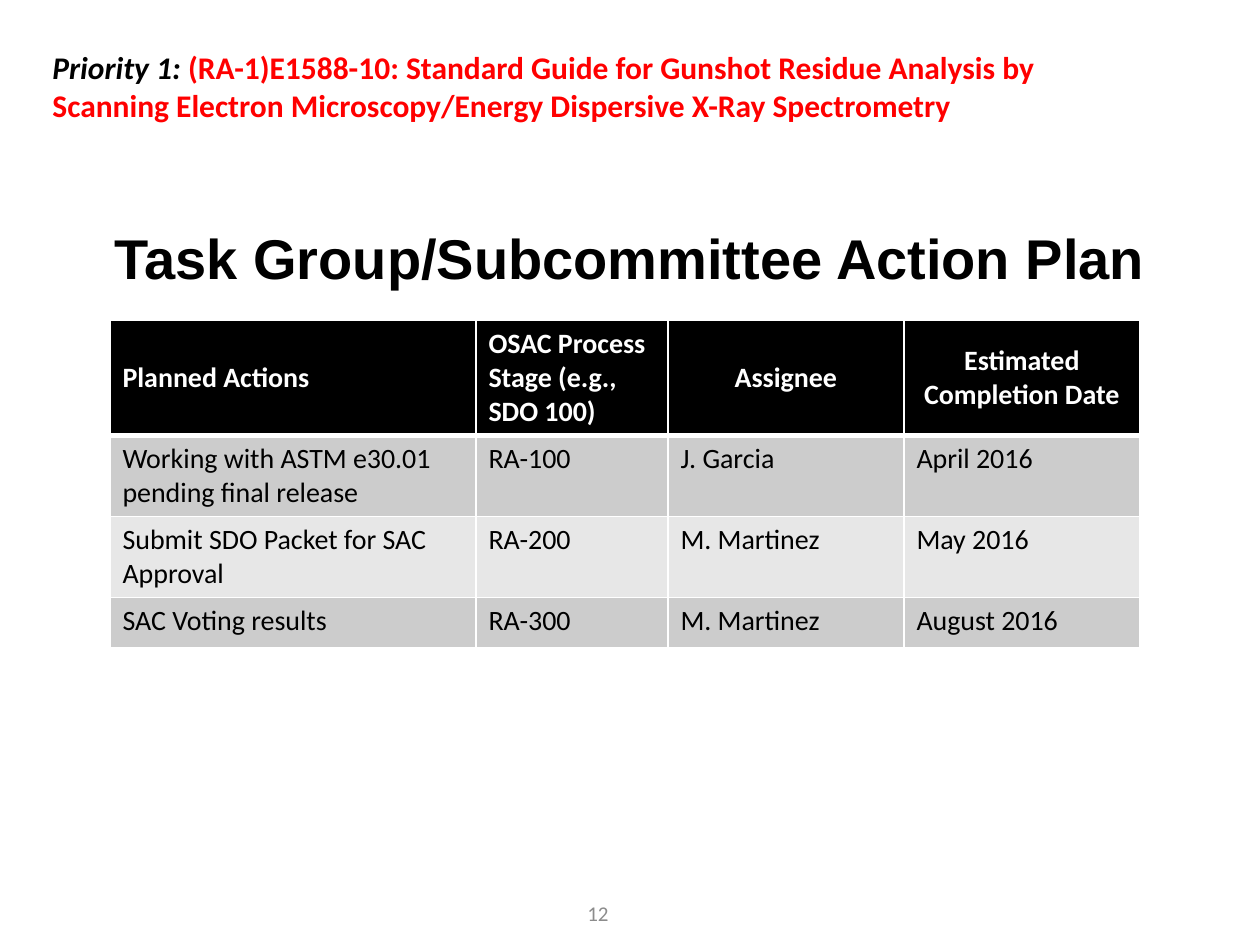
import dataclasses

import lxml.etree
import pptx
import pptx.dml.color
import pptx.enum.text
import pptx.oxml.ns
import pptx.util

RGB = pptx.dml.color.RGBColor
ALIGN = pptx.enum.text.PP_ALIGN
ANCHOR = pptx.enum.text.MSO_ANCHOR

BLACK = RGB(0x00, 0x00, 0x00)
WHITE = RGB(0xFF, 0xFF, 0xFF)
RED = RGB(0xFF, 0x00, 0x00)
GREY = RGB(0x8C, 0x8C, 0x8C)
BANDS = (RGB(0xCC, 0xCC, 0xCC), RGB(0xE7, 0xE7, 0xE7))

DPI = 126


def px(n: int) -> int:
    return round(n * 914400 / DPI)


@dataclasses.dataclass
class Box:
    left: int
    top: int
    width: int
    height: int

    def emu(self) -> tuple[int, ...]:
        return tuple(px(n) for n in dataclasses.astuple(self))


@dataclasses.dataclass
class Column:
    head: str
    width: int
    align: ALIGN
    cells: tuple[str, ...]


COLUMNS = (
    Column("Planned Actions", 366, ALIGN.LEFT,
           ("Working with ASTM e30.01 pending final release",
            "Submit SDO Packet for SAC Approval", "SAC Voting results")),
    Column("OSAC Process Stage (e.g., SDO 100)", 192, ALIGN.LEFT,
           ("RA-100", "RA-200", "RA-300")),
    Column("Assignee", 236, ALIGN.CENTER,
           ("J. Garcia", "M. Martinez", "M. Martinez")),
    Column("Estimated Completion Date", 236, ALIGN.CENTER,
           ("April 2016", "May 2016", "August 2016")),
)
ROWS = (114, 81, 81, 50)


def style(font, size: int, color: RGB, bold: bool = False, name: str = "Calibri") -> None:
    font.name, font.size, font.bold = name, pptx.util.Pt(size), bold
    font.color.rgb = color


def edge(cell, bottom: int) -> None:
    """Give a cell white borders, with the bottom one in points."""
    props = cell._tc.get_or_add_tcPr()
    for i, (side, width) in enumerate(zip("LRTB", (1, 1, 1, bottom))):
        line = lxml.etree.Element(pptx.oxml.ns.qn(f"a:ln{side}"),
                                  w=str(pptx.util.Pt(width)))
        fill = lxml.etree.SubElement(line, pptx.oxml.ns.qn("a:solidFill"))
        lxml.etree.SubElement(fill, pptx.oxml.ns.qn("a:srgbClr"), val=str(WHITE))
        props.insert(i, line)


def paint(cell, text: str, fill: RGB, color: RGB, head: bool, align: ALIGN) -> None:
    cell.text = text
    cell.fill.solid()
    cell.fill.fore_color.rgb = fill
    cell.vertical_anchor = ANCHOR.MIDDLE if head else ANCHOR.TOP
    para = cell.text_frame.paragraphs[0]
    para.alignment = align
    style(para.font, 16, color, head)
    edge(cell, 3 if head else 1)


def add_plan(slide, box: Box) -> None:
    table = slide.shapes.add_table(len(ROWS), len(COLUMNS), *box.emu()).table
    for row, height in zip(table.rows, ROWS):
        row.height = px(height)
    for c, col in enumerate(COLUMNS):
        table.columns[c].width = px(col.width)
        paint(table.cell(0, c), col.head, BLACK, WHITE, True, col.align)
        for r, text in enumerate(col.cells):
            paint(table.cell(r + 1, c), text, BANDS[r % 2], BLACK, False, ALIGN.LEFT)


def add_text(slide, box: Box):
    frame = slide.shapes.add_textbox(*box.emu()).text_frame
    frame.word_wrap = True
    return frame


def main() -> None:
    deck = pptx.Presentation()
    deck.slide_width, deck.slide_height = px(1260), px(945)
    slide = deck.slides.add_slide(deck.slide_layouts[5])

    # Title
    title = slide.shapes.title
    title.left, title.top, title.width, title.height = Box(0, 170, 1260, 183).emu()
    frame = title.text_frame
    frame.text = "Task Group/Subcommittee Action Plan"
    frame.vertical_anchor = ANCHOR.MIDDLE
    para = frame.paragraphs[0]
    para.alignment, para.line_spacing = ALIGN.CENTER, 0.9
    style(para.font, 32, BLACK, True, "Arial")

    # Action plan table
    add_plan(slide, Box(110, 320, sum(c.width for c in COLUMNS), sum(ROWS)))

    # Priority heading
    para = add_text(slide, Box(40, 42, 1051, 89)).paragraphs[0]
    for text, color, slant in (
        ("Priority 1: ", BLACK, True),
        ("(RA-1)E1588-10: Standard Guide for Gunshot Residue Analysis by Scanning "
         "Electron Microscopy/Energy Dispersive X-Ray Spectrometry", RED, False),
    ):
        run = para.add_run()
        run.text = text
        style(run.font, 18, color, True)
        run.font.italic = slant

    # Page number
    frame = add_text(slide, Box(456, 888, 284, 50))
    frame.text = "12"
    frame.vertical_anchor = ANCHOR.MIDDLE
    para = frame.paragraphs[0]
    para.alignment = ALIGN.CENTER
    style(para.font, 12, GREY)

    deck.save("out.pptx")


if __name__ == "__main__":
    main()
